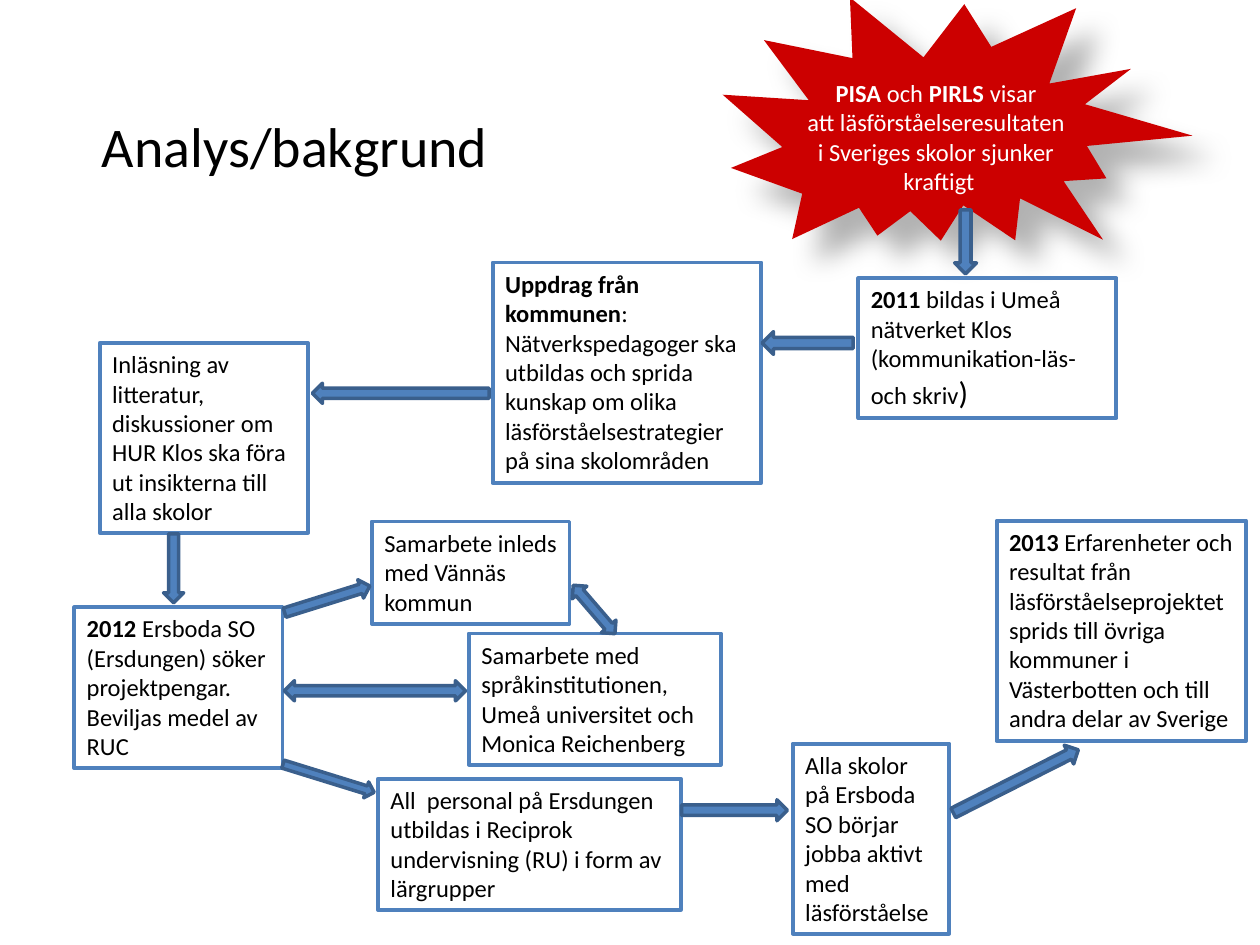
from typing import NamedTuple

from lxml.etree import SubElement
from pptx import Presentation
from pptx.dml.color import RGBColor
from pptx.enum.shapes import MSO_SHAPE
from pptx.enum.text import MSO_ANCHOR, MSO_AUTO_SIZE, PP_ALIGN
from pptx.oxml.ns import qn
from pptx.util import Pt

FONT = "Calibri"
BLUE, DARK_BLUE, RED = "4F81BD", "3A5F8C", "CC0000"
BLACK, WHITE = "000000", "FFFFFF"


class Run(NamedTuple):
    text: str
    bold: bool = False
    size: float = 14


class Box(NamedTuple):
    left: float
    top: float
    width: float
    height: float
    runs: list[Run]


class Arrow(NamedTuple):
    kind: MSO_SHAPE
    left: float
    top: float
    width: float
    height: float
    rotation: float = 0


BOXES = [
    Box(490.5, 159, 147.5, 80, [
        Run("2011", True),
        Run(" bildas i Umeå nätverket Klos (kommunikation-läs- och skriv"),
        Run(")", size=18)]),
    Box(281.5, 150, 153.5, 126, [
        Run("Uppdrag från kommunen", True),
        Run(": Nätverkspedagoger ska utbildas och sprida kunskap om olika "
            "läsförståelsestrategier på sina skolområden")]),
    Box(57, 196, 119, 108.5, [
        Run("Inläsning av litteratur, diskussioner om HUR Klos ska föra ut "
            "insikterna till alla skolor")]),
    Box(42.5, 347, 119, 92, [
        Run("2012", True),
        Run(" Ersboda SO (Ersdungen) söker projektpengar. "
            "Beviljas medel av RUC")]),
    Box(212.5, 298, 113, 58.5, [Run("Samarbete inleds med Vännäs kommun")]),
    Box(268, 362, 144, 75, [
        Run("Samarbete med språkinstitutionen, Umeå universitet och "
            "Monica Reichenberg")]),
    Box(216, 445, 173, 75, [
        Run("All  personal på Ersdungen utbildas i Reciprok undervisning (RU) "
            "i form av lärgrupper")]),
    Box(569.5, 297.5, 142.5, 126, [
        Run("2013 ", True),
        Run("Erfarenheter och resultat från läsförståelseprojektet sprids till "
            "övriga kommuner i Västerbotten och till andra delar av Sverige")]),
    Box(453, 425, 89.5, 108.5, [
        Run("Alla skolor på Ersboda SO börjar jobba aktivt med "
            "läsförståelse")]),
]

ARROWS = [
    Arrow(MSO_SHAPE.DOWN_ARROW, 545.5, 120, 12.5, 36.5),
    Arrow(MSO_SHAPE.LEFT_ARROW, 435.5, 189.5, 52, 13),
    Arrow(MSO_SHAPE.LEFT_ARROW, 178.5, 219, 101, 11.5),
    Arrow(MSO_SHAPE.DOWN_ARROW, 93.5, 305, 11.5, 39.5),
    Arrow(MSO_SHAPE.RIGHT_ARROW, 161.5, 337, 51, 11, 342.6),
    Arrow(MSO_SHAPE.RIGHT_ARROW, 160.5, 440, 54.5, 9.5, 17.2),
    Arrow(MSO_SHAPE.LEFT_RIGHT_ARROW, 162.5, 389, 103.5, 11.5),
    Arrow(MSO_SHAPE.UP_DOWN_ARROW, 334, 330, 11, 36.5, 319.3),
    Arrow(MSO_SHAPE.RIGHT_ARROW, 389.5, 457, 60.5, 12),
    Arrow(MSO_SHAPE.RIGHT_ARROW, 540.5, 440.5, 80, 12, 333.2),
]

BURST_LINES = [
    [Run("PISA", True), Run(" och "), Run("PIRLS ", True), Run("visar ")],
    [Run("att läsförståelseresultaten ")],
    [Run("i Sveriges skolor sjunker ")],
    [Run("kraftigt")],
]


def rgb(color: str) -> RGBColor:
    return RGBColor.from_string(color)


def add_runs(p, runs: list[Run], color: str) -> None:
    for run in runs:
        r = p.add_run()
        r.text = run.text
        r.font.name = FONT
        r.font.size = Pt(run.size)
        r.font.bold = run.bold
        r.font.color.rgb = rgb(color)


def add_box(s, box: Box) -> None:
    sp = s.shapes.add_shape(MSO_SHAPE.RECTANGLE, *map(Pt, box[:4]))
    sp.shadow.inherit = False
    sp.fill.background()
    sp.line.color.rgb = rgb(BLUE)
    sp.line.width = Pt(2.25)
    tf = sp.text_frame
    tf.word_wrap = True
    tf.vertical_anchor = MSO_ANCHOR.TOP
    p = tf.paragraphs[0]
    p.alignment = PP_ALIGN.LEFT
    add_runs(p, box.runs, BLACK)


def add_arrow(s, arrow: Arrow) -> None:
    sp = s.shapes.add_shape(arrow.kind, *map(Pt, arrow[1:5]))
    sp.rotation = arrow.rotation
    sp.shadow.inherit = False
    sp.fill.solid()
    sp.fill.fore_color.rgb = rgb(BLUE)
    sp.line.color.rgb = rgb(DARK_BLUE)
    sp.line.width = Pt(2)


def add_burst(s) -> None:
    sp = s.shapes.add_shape(MSO_SHAPE.EXPLOSION2, Pt(412.5), Pt(-11.5),
                            Pt(265), Pt(170.5))
    sp.rotation = 15.5
    sp.fill.solid()
    sp.fill.fore_color.rgb = rgb(RED)
    sp.line.fill.background()
    # Soft shadow: 30 % black, down to the right
    sp.shadow.inherit = False
    effects = sp.element.spPr.find(qn("a:effectLst"))
    shadow = SubElement(effects, qn("a:outerShdw"), blurRad=str(Pt(15)),
                        dist=str(Pt(18)), dir=str(45 * 60000),
                        rotWithShape="0")
    black = SubElement(shadow, qn("a:srgbClr"), val=BLACK)
    SubElement(black, qn("a:alpha"), val="30000")


def add_burst_text(s) -> None:
    sp = s.shapes.add_textbox(Pt(431.5), Pt(41), Pt(210), Pt(75))
    tf = sp.text_frame
    tf.word_wrap = True
    p = tf.paragraphs[0]
    p.alignment = PP_ALIGN.CENTER
    for i, runs in enumerate(BURST_LINES):
        if i:
            p.add_line_break()
        add_runs(p, runs, WHITE)


def set_title(s, text: str) -> None:
    sp = s.shapes.title
    sp.left, sp.top, sp.width, sp.height = map(Pt, (51, 60, 241, 46))
    tf = sp.text_frame
    tf.word_wrap = True
    tf.auto_size = MSO_AUTO_SIZE.NONE
    tf.vertical_anchor = MSO_ANCHOR.TOP
    p = tf.paragraphs[0]
    p.alignment = PP_ALIGN.LEFT
    add_runs(p, [Run(text, size=32)], BLACK)


def main() -> None:
    prs = Presentation()
    prs.slide_width, prs.slide_height = Pt(720), Pt(540)
    s = prs.slides.add_slide(prs.slide_layouts[5])
    set_title(s, "Analys/bakgrund")
    # Starburst behind the flow of boxes and arrows
    add_burst(s)
    for box in BOXES:
        add_box(s, box)
    for arrow in ARROWS:
        add_arrow(s, arrow)
    add_burst_text(s)
    prs.save("out.pptx")


if __name__ == "__main__":
    main()
